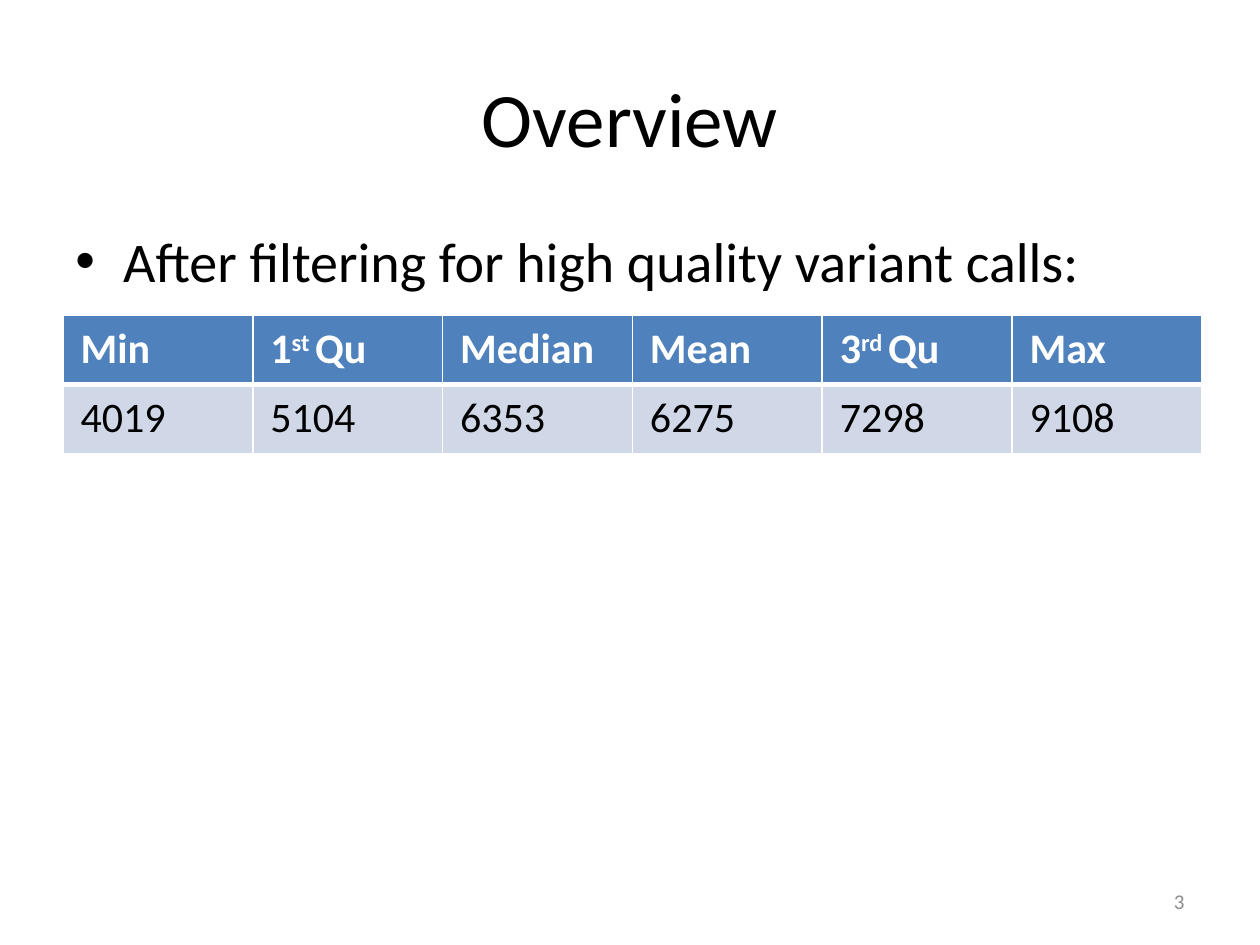
from lxml import etree
from pptx import Presentation
from pptx.dml.color import RGBColor
from pptx.enum.text import MSO_ANCHOR as Anchor, PP_ALIGN as Align
from pptx.oxml import parse_xml
from pptx.oxml.ns import nsdecls, qn
from pptx.util import Inches, Pt

BLACK = RGBColor(0, 0, 0)
WHITE = RGBColor(255, 255, 255)
GRAY = RGBColor(0x8C, 0x8C, 0x8C)
BLUE = RGBColor(0x4F, 0x81, 0xBD)
PALE = RGBColor(0xD0, 0xD8, 0xE8)
HEAD = [["Min"], ["1", "st ", "Qu"], ["Median"], ["Mean"], ["3", "rd ", "Qu"], ["Max"]]
DATA = [["4019"], ["5104"], ["6353"], ["6275"], ["7298"], ["9108"]]


def style(run, size, color, bold=False):
    """Set the font of a run."""
    font = run.font
    font.name, font.size, font.bold = "Calibri", Pt(size), bold
    font.color.rgb = color


def add_text(slide, box, text, size, color, align, anchor):
    """Place one line of text in the box and return its paragraph."""
    frame = slide.shapes.add_textbox(*map(Inches, box)).text_frame
    frame.word_wrap = True
    frame.vertical_anchor = anchor
    frame.text = text
    para = frame.paragraphs[0]
    para.alignment = align
    style(para.runs[0], size, color)
    return para


def add_bullet(slide, box, text):
    """Place a bulleted line at the top of the box."""
    para = add_text(slide, box, text, 32, BLACK, Align.LEFT, Anchor.TOP)
    para.space_before = Pt(6.4)
    props = para._p.get_or_add_pPr()
    props.set("marL", str(Inches(0.38)))
    props.set("indent", str(Inches(-0.38)))
    font = etree.SubElement(props, qn("a:buFont"))
    font.set("typeface", "Arial")
    etree.SubElement(props, qn("a:buChar")).set("char", "•")


def add_edges(cell, widths):
    """Draw white cell borders of the given widths."""
    props = cell._tc.get_or_add_tcPr()
    for i, (side, width) in enumerate(widths.items()):
        props.insert(i, parse_xml(
            f'<a:ln{side} {nsdecls("a")} w="{Pt(width)}"><a:solidFill>'
            f'<a:srgbClr val="{WHITE}"/></a:solidFill></a:ln{side}>'))


def fill_cell(cell, parts, fill, color, bold, widths):
    """Write the parts into a cell, raising every second one."""
    cell.margin_left = cell.margin_right = Inches(0.14)
    cell.margin_top = cell.margin_bottom = Inches(0.07)
    cell.fill.solid()
    cell.fill.fore_color.rgb = fill
    add_edges(cell, widths)
    para = cell.text_frame.paragraphs[0]
    for i, part in enumerate(parts):
        run = para.add_run()
        run.text = part
        style(run, 24, color, bold)
        if i % 2:
            run._r.get_or_add_rPr().set("baseline", "30000")


def add_stats(slide, box):
    """Fill the box with the summary table."""
    table = slide.shapes.add_table(2, len(HEAD), *map(Inches, box)).table
    for col in table.columns:
        col.width = Inches(box[2] / len(HEAD))
    rows = [(HEAD, BLUE, WHITE, True, dict(L=1, R=1, T=1, B=3)),
            (DATA, PALE, BLACK, False, dict(L=1, R=1, T=3, B=1))]
    for row, (items, *look) in zip(table.rows, rows):
        row.height = Inches(box[3] / 2)
        for cell, parts in zip(row.cells, items):
            fill_cell(cell, parts, *look)


def main():
    """Build and save the slide."""
    deck = Presentation()
    deck.slide_width, deck.slide_height = Inches(10), Inches(7.5)
    slide = deck.slides.add_slide(deck.slide_layouts[6])
    add_text(slide, (0.5, 0.3, 9, 1.25), "Overview", 44, BLACK, Align.CENTER, Anchor.MIDDLE)
    add_bullet(slide, (0.5, 1.75, 9, 4.95), "After filtering for high quality variant calls:")
    add_text(slide, (7.17, 6.95, 2.33, 0.4), "3", 12, GRAY, Align.RIGHT, Anchor.MIDDLE)
    add_stats(slide, (0.5, 2.5, 9.04, 1.1))
    deck.save("out.pptx")


if __name__ == "__main__":
    main()
